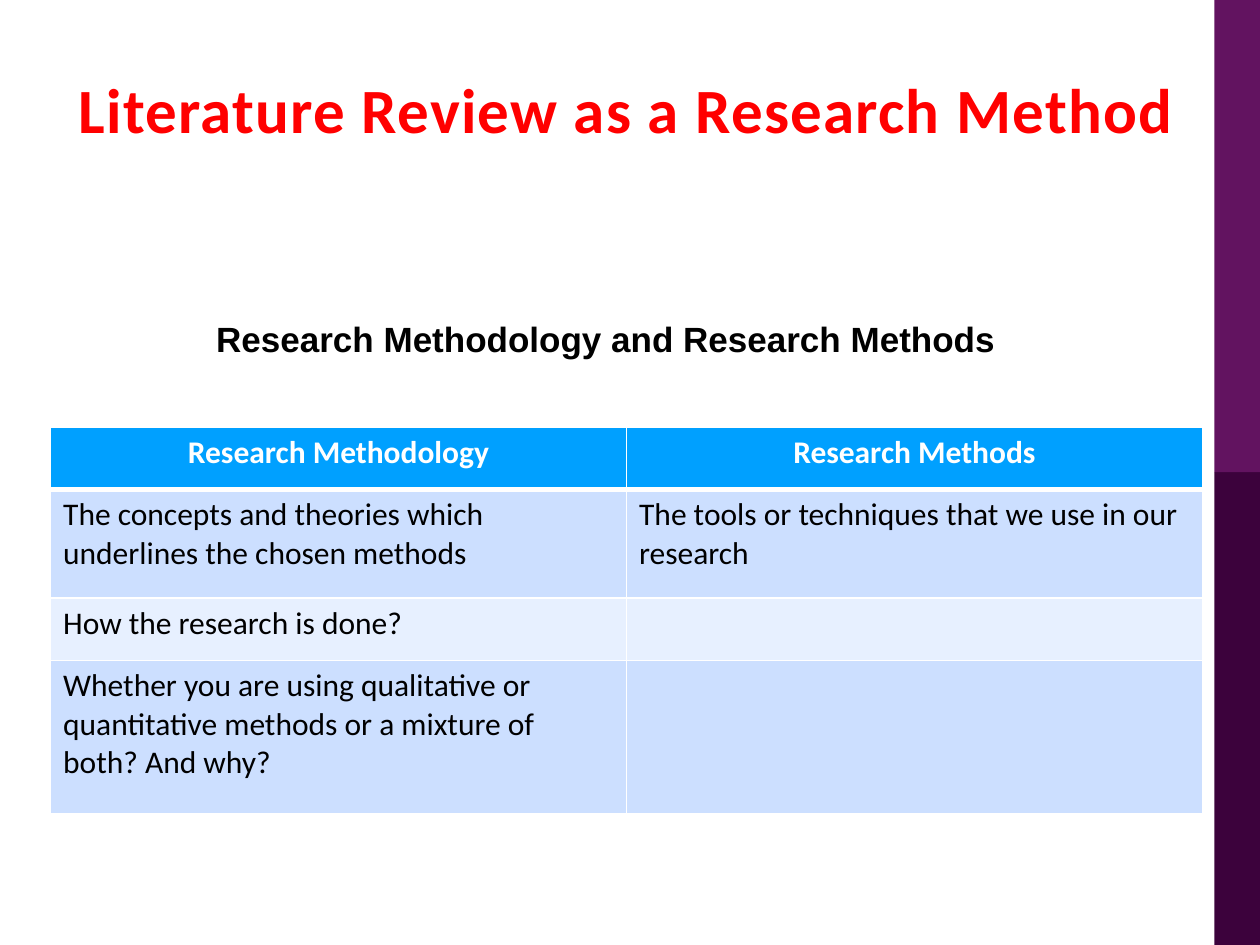
from dataclasses import dataclass

from lxml import etree
from pptx import Presentation
from pptx.dml.color import RGBColor
from pptx.enum.shapes import MSO_SHAPE
from pptx.enum.text import MSO_ANCHOR, PP_ALIGN
from pptx.oxml.ns import qn
from pptx.util import Cm, Pt

CENTER, LEFT = PP_ALIGN.CENTER, PP_ALIGN.LEFT
TOP = MSO_ANCHOR.TOP
RECTANGLE = MSO_SHAPE.RECTANGLE
TITLE_ONLY_LAYOUT = 5
WHITE, BLACK, RED = "FFFFFF", "000000", "FF0000"
HEADER_FILL = "00A0FF"
BAND_FILLS = ("CCDFFF", "E7F0FF")
CONTENT_LEFT, CONTENT_WIDTH = 1.02, 23.22


@dataclass(frozen=True)
class Band:
    top: float
    height: float
    color: str


@dataclass(frozen=True)
class TextStyle:
    size: float
    color: str
    font: str = "Calibri"
    bold: bool = True
    alignment: PP_ALIGN = CENTER


@dataclass(frozen=True)
class TableRow:
    height: float
    texts: tuple[str, str]


SIDE_BANDS = (Band(9.52, 9.53, "3C023C"), Band(0, 9.52, "621360"))
TITLE_STYLE = TextStyle(36, RED)
SUBTITLE_STYLE = TextStyle(20, BLACK, font="Arial")
HEADER_STYLE = TextStyle(18, WHITE)
BODY_STYLE = TextStyle(18, BLACK, bold=False, alignment=LEFT)
ROWS = (
    TableRow(1.26, ("Research Methodology", "Research Methods")),
    TableRow(2.18, ("The concepts and theories which underlines the chosen methods",
                    "The tools or techniques that we use in our research")),
    TableRow(1.26, ("How the research is done?", "")),
    TableRow(3.1, ("Whether you are using qualitative or quantitative methods "
                   "or a mixture of both? And why?", "")),
)


def rgb(color: str) -> RGBColor:
    return RGBColor.from_string(color)


def write_text(text_frame, text: str, style: TextStyle) -> None:
    text_frame.text = text
    text_frame.word_wrap = True
    paragraph = text_frame.paragraphs[0]
    paragraph.alignment = style.alignment
    for run in paragraph.runs:
        run.font.name = style.font
        run.font.size = Pt(style.size)
        run.font.bold = style.bold
        run.font.color.rgb = rgb(style.color)


def add_band(slide, band: Band) -> None:
    shape = slide.shapes.add_shape(RECTANGLE, Cm(24.48), Cm(band.top), Cm(0.92), Cm(band.height))
    shape.shadow.inherit = False
    shape.fill.solid()
    shape.fill.fore_color.rgb = rgb(band.color)
    shape.line.fill.background()


def add_title(slide, text: str) -> None:
    title = slide.shapes.title
    title.left, title.top = Cm(CONTENT_LEFT), Cm(1.55)
    title.width, title.height = Cm(CONTENT_WIDTH), Cm(2.08)
    write_text(title.text_frame, text, TITLE_STYLE)
    title.text_frame.vertical_anchor = TOP
    paragraph = title.text_frame.paragraphs[0]
    paragraph.line_spacing = Pt(36)
    # Letter spacing, in hundredths of a point
    paragraph.runs[0].font._element.set("spc", "70")


def set_border(cell, side: str, width: float) -> None:
    properties = cell._tc.get_or_add_tcPr()
    line = etree.SubElement(properties, qn(f"a:ln{side}"), w=str(Pt(width)))
    fill = etree.SubElement(line, qn("a:solidFill"))
    etree.SubElement(fill, qn("a:srgbClr"), val=WHITE)


def format_cell(cell, text: str, row_index: int) -> None:
    is_header = row_index == 0
    write_text(cell.text_frame, text, HEADER_STYLE if is_header else BODY_STYLE)
    widths = {"L": 1, "R": 1, "T": 3 if row_index == 1 else 1, "B": 3 if is_header else 1}
    for side, width in widths.items():
        set_border(cell, side, width)
    cell.fill.solid()
    cell.fill.fore_color.rgb = rgb(HEADER_FILL if is_header else BAND_FILLS[(row_index - 1) % 2])


def add_comparison_table(slide, rows: tuple[TableRow, ...]) -> None:
    height = sum(row.height for row in rows)
    table = slide.shapes.add_table(len(rows), 2, Cm(CONTENT_LEFT), Cm(8.61),
                                   Cm(CONTENT_WIDTH), Cm(height)).table
    for row_index, row in enumerate(rows):
        table.rows[row_index].height = Cm(row.height)
        for column_index, text in enumerate(row.texts):
            format_cell(table.cell(row_index, column_index), text, row_index)


def main() -> None:
    presentation = Presentation()
    presentation.slide_width, presentation.slide_height = Cm(25.4), Cm(19.05)
    slide = presentation.slides.add_slide(presentation.slide_layouts[TITLE_ONLY_LAYOUT])

    # Coloured strip on the right edge
    for band in SIDE_BANDS:
        add_band(slide, band)

    # Headings
    add_title(slide, "Literature Review as a Research Method")
    subtitle = slide.shapes.add_textbox(Cm(2.41), Cm(6.27), Cm(19.61), Cm(1.12))
    write_text(subtitle.text_frame, "Research Methodology and Research Methods", SUBTITLE_STYLE)

    # Methodology and methods side by side
    add_comparison_table(slide, ROWS)

    presentation.save("out.pptx")


if __name__ == "__main__":
    main()
